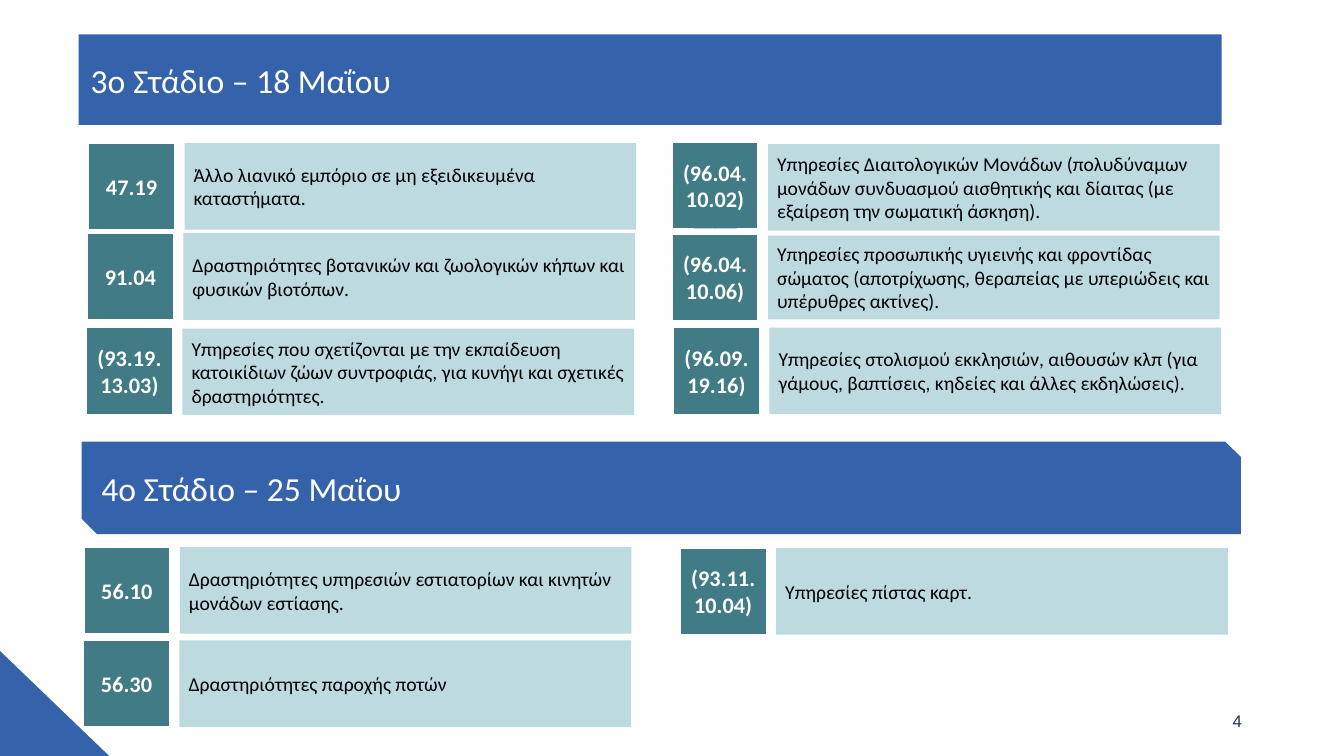
import pptx
import pptx.util
import pptx.dml.color
import pptx.enum.shapes
import pptx.enum.text
import pptx.oxml

Pt = pptx.util.Pt
MSO_SHAPE = pptx.enum.shapes.MSO_SHAPE
PP_ALIGN = pptx.enum.text.PP_ALIGN
COLORS = {"blue": "3462AB", "teal": "417B85", "pale": "BDDADF",
          "white": "FFFFFF", "black": "000000", "navy": "253356"}


def color(name):
    return pptx.dml.color.RGBColor.from_string(COLORS[name])


def style(sp, text, size, ink, align, margins, fill=None, line=None, bold=False, font="Calibri"):
    """Set the fill, outline and text of a shape."""
    if fill:
        sp.shadow.inherit = False
        sp.fill.solid()
        sp.fill.fore_color.rgb = color(fill)
    if line:
        sp.line.color.rgb = color(line)
        sp.line.width = Pt(0.75)
    else:
        sp.line.fill.background()
    tf = sp.text_frame
    tf.word_wrap = True
    tf.auto_size = pptx.enum.text.MSO_AUTO_SIZE.NONE
    tf.vertical_anchor = pptx.enum.text.MSO_ANCHOR.MIDDLE
    tf.margin_left = tf.margin_right = Pt(margins[0])
    tf.margin_top = tf.margin_bottom = Pt(margins[1])
    tf.text = text
    for p in tf.paragraphs:
        p.alignment = align
        p.font.name = font
        p.font.size = Pt(size)
        p.font.bold = bold
        p.font.color.rgb = color(ink)


prs = pptx.Presentation()
prs.slide_width, prs.slide_height = Pt(960), Pt(540)
slide = prs.slides.add_slide(prs.slide_layouts[5])
shapes = slide.shapes

corner = shapes.add_shape(MSO_SHAPE.RIGHT_TRIANGLE, Pt(0), Pt(465), Pt(78), Pt(75))
corner.shadow.inherit = False
corner.fill.solid()
corner.fill.fore_color.rgb = color("blue")
corner.line.fill.background()

# Stage banners: the first is the slide title
title = shapes.title
title.left, title.top, title.width, title.height = Pt(56.2), Pt(24.5), Pt(816.5), Pt(64.8)
title.element.spPr.append(pptx.oxml.parse_xml(
    '<a:prstGeom xmlns:a="http://schemas.openxmlformats.org/drawingml/2006/main"'
    ' prst="snip2DiagRect"><a:avLst/></a:prstGeom>'))
stage_4 = shapes.add_shape(MSO_SHAPE.SNIP_2_DIAG_RECTANGLE,
                           Pt(58.3), Pt(315.4), Pt(828), Pt(66.2))
for banner, text in ((title, "3o Στάδιο – 18 Μαΐου"), (stage_4, "4o Στάδιο – 25 Μαΐου")):
    style(banner, text, 24, "white", PP_ALIGN.LEFT, (8.6, 1.4), fill="blue")

# Activities: left, top, drop of the description, its height, code, description
BOX_W, BOX_H, DESC_W, DESC_STEP = 61.2, 61.9, 322.6, 68.4
activities = [
    (63.4, 102.2, 0, BOX_H, "47.19",
     "Άλλο λιανικό εμπόριο σε μη εξειδικευμένα καταστήματα."),
    (62.6, 166.6, 0, BOX_H, "91.04",
     "Δραστηριότητες βοτανικών και ζωολογικών κήπων και φυσικών βιοτόπων."),
    (61.9, 234, 0.7, BOX_H, "(93.19. 13.03)",
     "Υπηρεσίες που σχετίζονται με την εκπαίδευση κατοικίδιων ζώων συντροφιάς, "
     "για κυνήγι και σχετικές δραστηριότητες."),
    (480.2, 101.7, 1.2, BOX_H, "(96.04. 10.02)",
     "Υπηρεσίες Διαιτολογικών Μονάδων (πολυδύναμων μονάδων συνδυασμού αισθητικής "
     "και δίαιτας (με εξαίρεση την σωματική άσκηση)."),
    (480.2, 167.2, 1.2, 59.8, "(96.04.\n10.06)",
     "Υπηρεσίες προσωπικής υγιεινής και φροντίδας σώματος (αποτρίχωσης, θεραπείας "
     "με υπεριώδεις και υπέρυθρες ακτίνες)."),
    (481.2, 234, 0, BOX_H, "(96.09. 19.16)",
     "Υπηρεσίες στολισμού εκκλησιών, αιθουσών κλπ (για γάμους, βαπτίσεις, κηδείες "
     "και άλλες εκδηλώσεις)."),
    (60, 390.8, 0, BOX_H, "56.10",
     "Δραστηριότητες υπηρεσιών εστιατορίων και κινητών μονάδων εστίασης."),
    (59.8, 457.4, 0, BOX_H, "56.30", "Δραστηριότητες παροχής ποτών"),
    (486, 391.5, 0, BOX_H, "(93.11. 10.04)", "Υπηρεσίες πίστας καρτ."),
]
for left, top, drop, height, code, description in activities:
    sp = shapes.add_shape(MSO_SHAPE.RECTANGLE, Pt(left), Pt(top), Pt(BOX_W), Pt(BOX_H))
    style(sp, code, 15.9, "white", PP_ALIGN.CENTER, (2.9, 6.5),
          fill="teal", line="white", bold=True)
    sp = shapes.add_shape(MSO_SHAPE.RECTANGLE, Pt(left + DESC_STEP), Pt(top + drop),
                          Pt(DESC_W), Pt(height))
    style(sp, description, 14, "black", PP_ALIGN.LEFT, (6.5, 2.9), fill="pale")

number = shapes.add_textbox(Pt(678.2), Pt(500.4), Pt(216), Pt(28.8))
style(number, "4", 12, "navy", PP_ALIGN.RIGHT, (7.2, 3.6), font="Arial")

prs.save("out.pptx")
